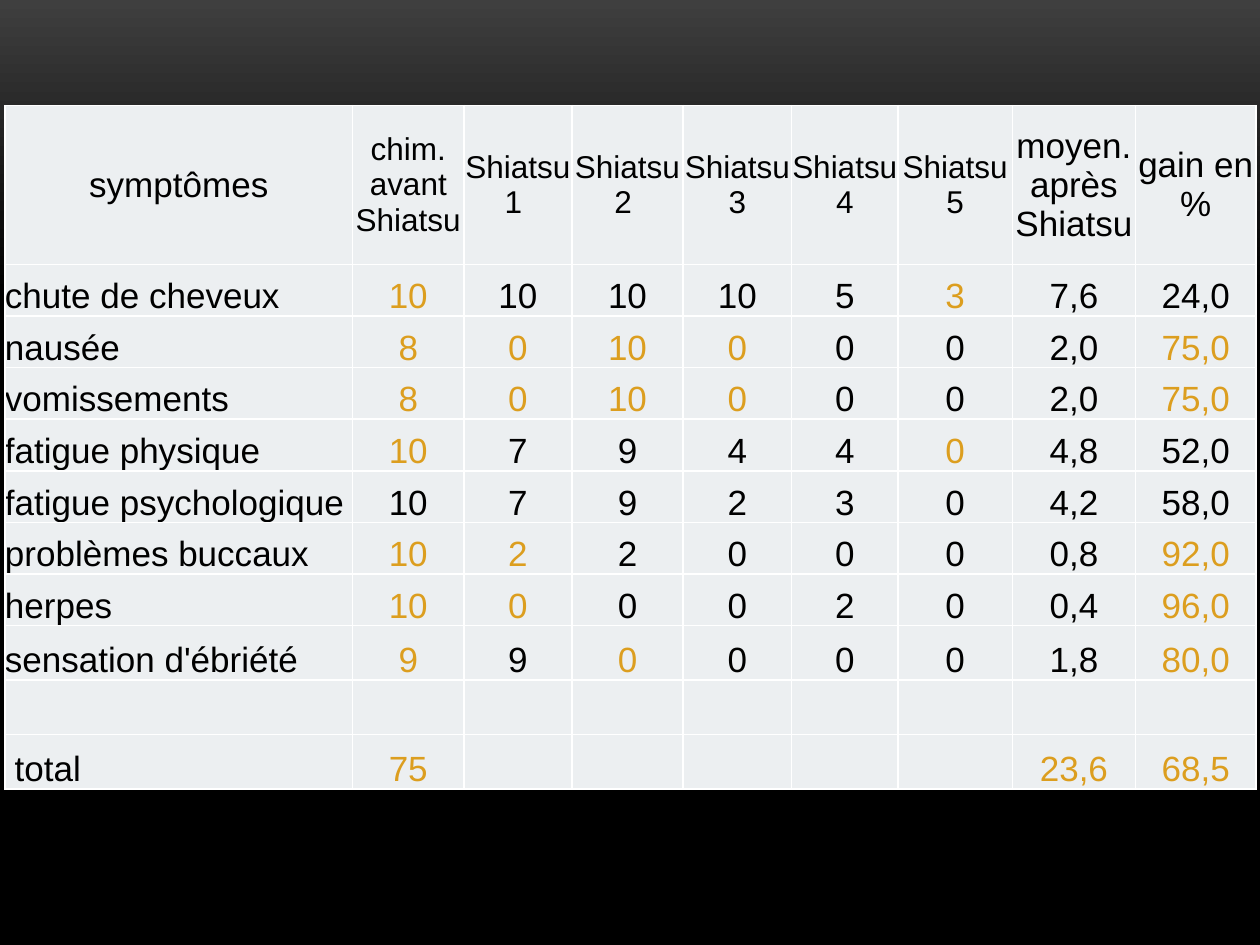
from copy import deepcopy
from dataclasses import dataclass

from lxml import etree
from pptx import Presentation
from pptx.dml.color import RGBColor
from pptx.enum.text import MSO_ANCHOR, PP_ALIGN
from pptx.oxml.ns import qn
from pptx.slide import Slide
from pptx.table import _Cell
from pptx.util import Cm, Pt

CENTER, LEFT = PP_ALIGN.CENTER, PP_ALIGN.LEFT
MIDDLE, BOTTOM = MSO_ANCHOR.MIDDLE, MSO_ANCHOR.BOTTOM
COLORS = {
    "text": "000000",
    "highlight": "DC9E1F",
    "cell": "ECEFF1",
    "border": "FFFFFF",
    "glow": "3F3F3F",
    "night": "000000",
}
FONT = "Arial"
COLUMN_WIDTHS = [7.01, 2.24, 2.18, 2.24, 2.19, 2.14, 2.31, 2.48, 2.43]
ROW_HEIGHTS = [3.2] + [1.04] * 7 + [1.1] * 3
HANGING_INDENT = Cm(0.66)


@dataclass(frozen=True)
class TableRow:
    label: str
    values: tuple[str, ...] = ("",) * 8
    highlights: tuple[int, ...] = ()


HEADER = TableRow("symptômes", (
    "chim. avant Shiatsu", "Shiatsu 1 ", "Shiatsu 2 ", "Shiatsu 3",
    "Shiatsu 4", "Shiatsu 5", "moyen. après Shiatsu", "gain en %",
))
HEADER_SIZES = [20] + [18] * 6 + [20] * 2
BODY_ROWS = [
    TableRow("chute de cheveux", ("10", "10", "10", "10", "5", "3", "7,6", "24,0"), (1, 6)),
    TableRow("nausée", ("8", "0", "10", "0", "0", "0", "2,0", "75,0"), (1, 2, 3, 4, 8)),
    TableRow("vomissements", ("8", "0", "10", "0", "0", "0", "2,0", "75,0"), (1, 2, 3, 4, 8)),
    TableRow("fatigue physique", ("10", "7", "9", "4", "4", "0", "4,8", "52,0"), (1, 6)),
    TableRow("fatigue psychologique", ("10", "7", "9", "2", "3", "0", "4,2", "58,0")),
    TableRow("problèmes buccaux", ("10", "2", "2", "0", "0", "0", "0,8", "92,0"), (1, 2, 8)),
    TableRow("herpes", ("10", "0", "0", "0", "2", "0", "0,4", "96,0"), (1, 2, 8)),
    TableRow("sensation d'ébriété", ("9", "9", "0", "0", "0", "0", "1,8", "80,0"), (1, 3, 8)),
    TableRow(""),
    TableRow(" total", ("75", "", "", "", "", "", "23,6", "68,5"), (1, 7, 8)),
]


def rgb(name: str) -> RGBColor:
    return RGBColor.from_string(COLORS[name])


def paint_background(page: Slide) -> None:
    fill = page.background.fill
    fill.gradient()
    fill.gradient_angle = 270
    stop_list = page.element.find(".//" + qn("a:gsLst"))
    stop_list.append(deepcopy(stop_list[-1]))
    stops = zip(fill.gradient_stops, (0, 0.31, 1), ("glow", "night", "night"))
    for stop, position, color in stops:
        stop.position = position
        stop.color.rgb = rgb(color)


def add_borders(cell: _Cell) -> None:
    properties = cell._tc.get_or_add_tcPr()
    for index, side in enumerate(("a:lnL", "a:lnR", "a:lnT", "a:lnB")):
        line = etree.Element(qn(side), w=str(Pt(1)))
        solid = etree.SubElement(line, qn("a:solidFill"))
        etree.SubElement(solid, qn("a:srgbClr"), val=COLORS["border"])
        properties.insert(index, line)


def style_cell(cell: _Cell, anchor: MSO_ANCHOR) -> None:
    cell.fill.solid()
    cell.fill.fore_color.rgb = rgb("cell")
    cell.margin_left = cell.margin_right = cell.margin_top = cell.margin_bottom = 0
    cell.vertical_anchor = anchor
    add_borders(cell)


def write_cell(cell: _Cell, text: str, size: int, color: str, align: PP_ALIGN, hanging: bool) -> None:
    para = cell.text_frame.paragraphs[0]
    para.alignment = align
    if hanging:
        properties = para._p.get_or_add_pPr()
        properties.set("marL", str(HANGING_INDENT))
        properties.set("indent", str(-HANGING_INDENT))
    if text:
        span = para.add_run()
        span.text = text
        span.font.name = FONT
        span.font.size = Pt(size)
        span.font.color.rgb = rgb(color)


def add_symptom_table(page: Slide) -> None:
    frame = page.shapes.add_table(
        len(ROW_HEIGHTS), len(COLUMN_WIDTHS), Cm(0.1), Cm(2.13),
        Cm(sum(COLUMN_WIDTHS)), Cm(sum(ROW_HEIGHTS)),
    )
    table = frame.table
    table.first_row = table.horz_banding = False
    for column, width in zip(table.columns, COLUMN_WIDTHS):
        column.width = Cm(width)
    for row, height in zip(table.rows, ROW_HEIGHTS):
        row.height = Cm(height)
    for row_index, row in enumerate([HEADER, *BODY_ROWS]):
        is_header = row_index == 0
        for column_index, text in enumerate((row.label, *row.values)):
            cell = table.cell(row_index, column_index)
            is_label = column_index == 0
            size = HEADER_SIZES[column_index] if is_header else 20
            color = "highlight" if column_index in row.highlights else "text"
            align = LEFT if is_label and not is_header else CENTER
            style_cell(cell, MIDDLE if is_header else BOTTOM)
            write_cell(cell, text, size, color, align, is_label)


def main() -> None:
    """Build the slide comparing symptoms before and after Shiatsu."""
    deck = Presentation()
    deck.slide_width, deck.slide_height = Cm(25.4), Cm(19.05)
    page = deck.slides.add_slide(deck.slide_layouts[6])
    paint_background(page)
    add_symptom_table(page)
    deck.save("out.pptx")


if __name__ == "__main__":
    main()
